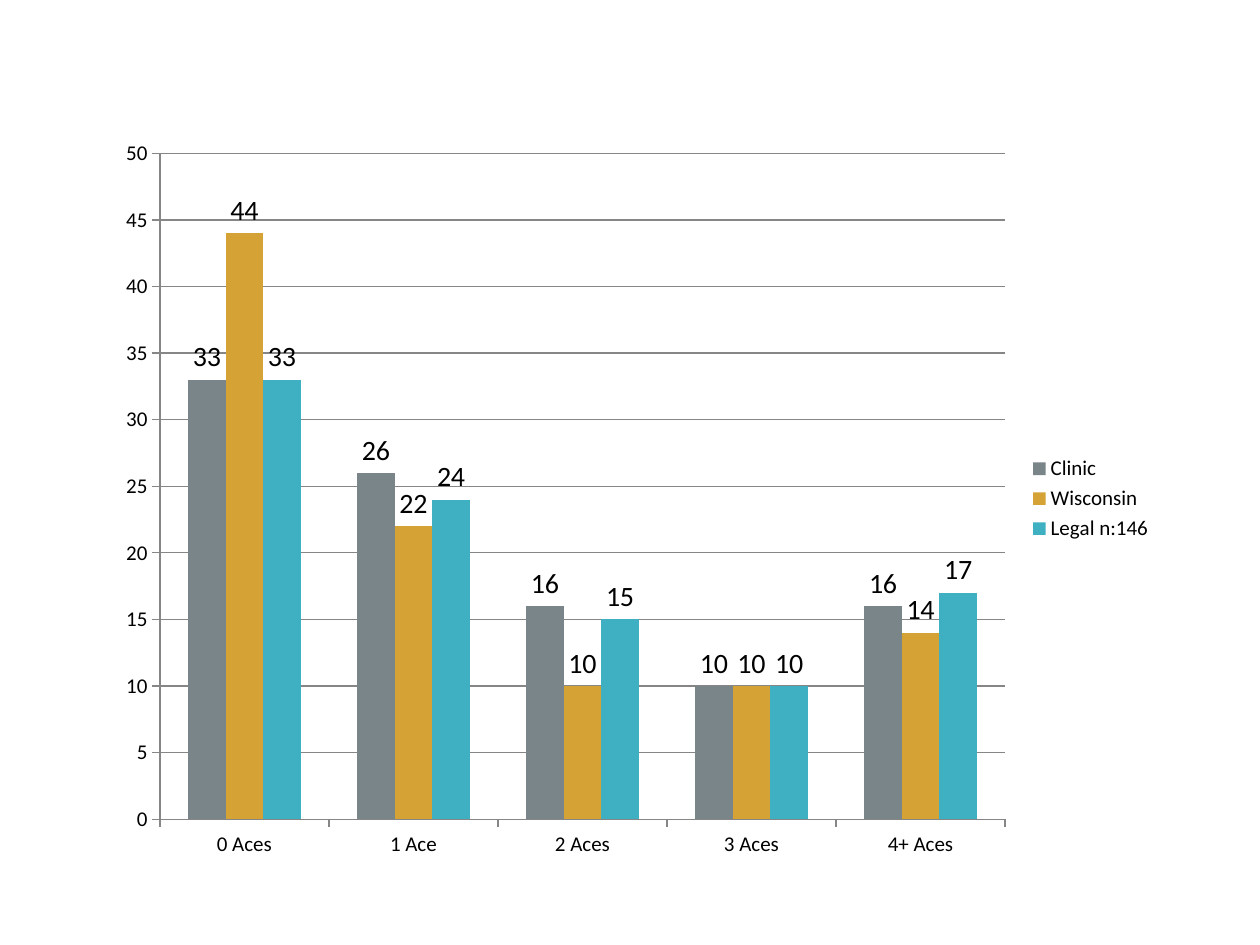
from pptx import Presentation
from pptx.chart.data import CategoryChartData as Data
from pptx.dml.color import RGBColor
from pptx.enum.chart import XL_CHART_TYPE as Kind
from pptx.enum.chart import XL_LABEL_POSITION as Spot
from pptx.enum.chart import XL_LEGEND_POSITION as Side
from pptx.enum.chart import XL_TICK_MARK as Tick
from pptx.util import Pt

BLACK = RGBColor(0x00, 0x00, 0x00)
LINE = RGBColor(0x86, 0x86, 0x86)
GREY = RGBColor(0x7A, 0x85, 0x8A)
GOLD = RGBColor(0xD5, 0xA2, 0x35)
TEAL = RGBColor(0x3F, 0xB0, 0xC1)

CATS = ["0 Aces", "1 Ace", "2 Aces", "3 Aces", "4+ Aces"]
ROWS = [
    ("Clinic", GREY, (33, 26, 16, 10, 16)),
    ("Wisconsin", GOLD, (44, 22, 10, 10, 14)),
    ("Legal n:146", TEAL, (33, 24, 15, 10, 17)),
]


class Deck:
    """Holds the chart style and the current slide."""

    def __init__(self, slide, face="Calibri", size=12, big=16):
        self.slide, self.face = slide, face
        self.size, self.big = size, big

    def font(self, font, size):
        font.name, font.size = self.face, Pt(size)
        font.color.rgb = BLACK

    def line(self, line):
        line.color.rgb, line.width = LINE, Pt(0.75)

    def axis(self, axis, grid):
        axis.major_tick_mark = Tick.OUTSIDE
        axis.minor_tick_mark = Tick.NONE
        axis.has_major_gridlines = grid
        self.line(axis.format.line)
        if grid:
            self.line(axis.major_gridlines.format.line)

    def bars(self, cats, rows, box, top, step):
        data = Data()
        data.categories = cats
        for name, _, vals in rows:
            data.add_series(name, vals)
        frame = self.slide.shapes.add_chart(
            Kind.COLUMN_CLUSTERED, *map(Pt, box), data)
        chart = frame.chart
        self.font(chart.font, self.size)
        chart.has_title = False
        chart.has_legend = True
        chart.legend.position = Side.RIGHT
        chart.legend.include_in_layout = False
        self.axis(chart.category_axis, False)
        self.axis(chart.value_axis, True)
        chart.value_axis.minimum_scale = 0
        chart.value_axis.maximum_scale = top
        chart.value_axis.major_unit = step
        plot = chart.plots[0]
        plot.gap_width, plot.overlap = 150, 0
        plot.vary_by_categories = False
        for row, (_, tint, _) in zip(plot.series, rows):
            row.format.fill.solid()
            row.format.fill.fore_color.rgb = tint
            tags = row.data_labels
            tags.show_value = True
            tags.position = Spot.OUTSIDE_END
            self.font(tags.font, self.big)


def main():
    show = Presentation()
    show.slide_width, show.slide_height = Pt(720), Pt(540)
    deck = Deck(show.slides.add_slide(show.slide_layouts[6]))
    deck.bars(CATS, ROWS, (60, 72, 606, 426), 50, 5)
    show.save("out.pptx")


if __name__ == "__main__":
    main()
